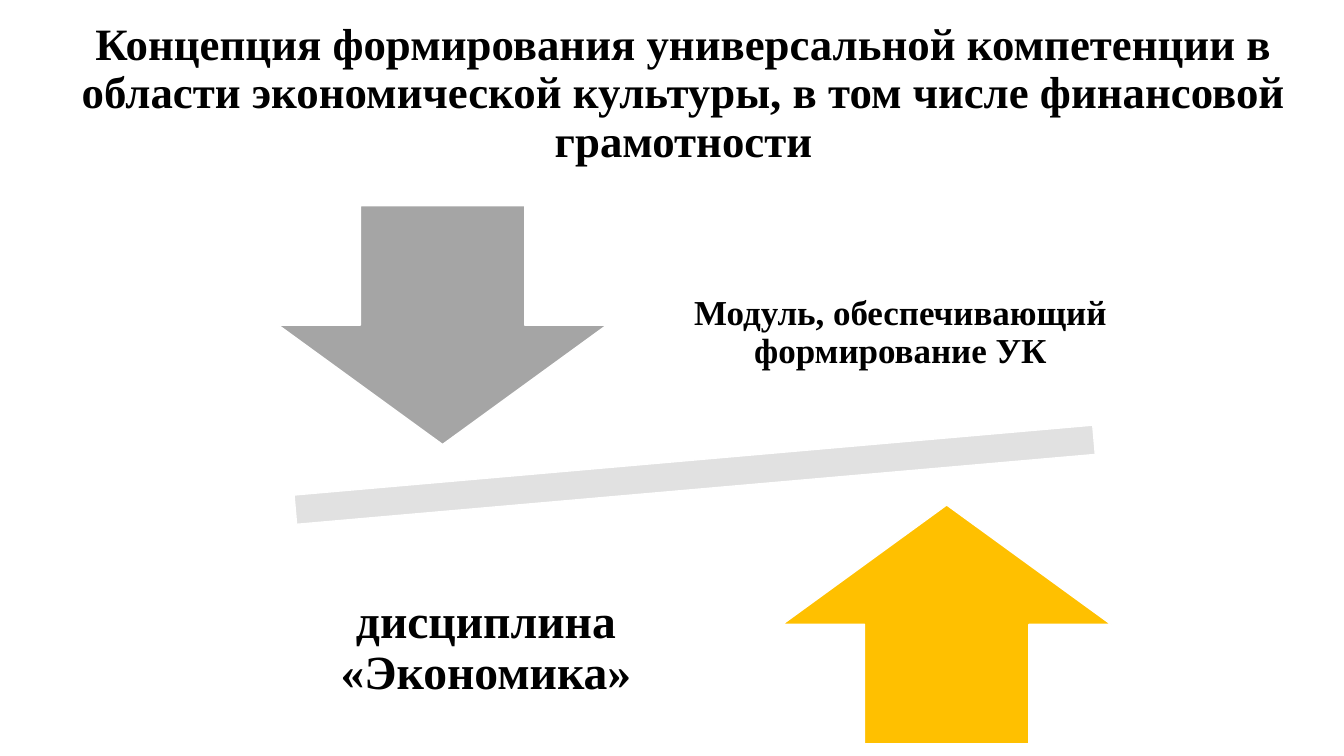
from pptx import Presentation
from pptx.dml.color import RGBColor
from pptx.enum.shapes import MSO_SHAPE
from pptx.enum.text import MSO_ANCHOR, MSO_AUTO_SIZE, PP_ALIGN
from pptx.util import Inches, Pt

MINUS, DOWN, UP = MSO_SHAPE.MATH_MINUS, MSO_SHAPE.DOWN_ARROW, MSO_SHAPE.UP_ARROW
MIDDLE, CENTER, NO_FIT = MSO_ANCHOR.MIDDLE, PP_ALIGN.CENTER, MSO_AUTO_SIZE.NONE

BLACK = RGBColor(0x00, 0x00, 0x00)
WHITE = RGBColor(0xFF, 0xFF, 0xFF)
GRAY = RGBColor(0xA5, 0xA5, 0xA5)
LIGHT_GRAY = RGBColor(0xE1, 0xE1, 0xE1)
AMBER = RGBColor(0xFF, 0xC0, 0x00)
FONT = "Times New Roman"

TITLE = ("Концепция формирования универсальной компетенции в области "
         "экономической культуры, в том числе финансовой грамотности")
TITLE_BOX = (0.65, 0.34, 12.26, 1.19)

BALANCE = [
    (MINUS, (1.48, 4.09, 10.82, 1.24), 355, LIGHT_GRAY),
    (DOWN, (2.76, 2.04, 3.26, 2.37), 0, GRAY),
    (UP, (7.76, 5.01, 3.26, 2.37), 0, AMBER),
]
LABELS = [
    ("Модуль, обеспечивающий формирование УК", (6.1, 2.06, 5.66, 2.49), 25, 0.19),
    ("дисциплина «Экономика»", (3.08, 5.19, 3.48, 2.49), 34, 0.26),
]


def inches(box):
    """Convert a box in inches to lengths."""
    return [Inches(value) for value in box]


def write(frame, text, size):
    """Fill a text frame with one centred bold paragraph."""
    frame.text = text
    frame.word_wrap = True
    frame.auto_size = NO_FIT
    frame.vertical_anchor = MIDDLE
    paragraph = frame.paragraphs[0]
    paragraph.alignment = CENTER
    paragraph.line_spacing = 0.9
    font = paragraph.runs[0].font
    font.name, font.size, font.bold = FONT, Pt(size), True
    font.color.rgb = BLACK


def add_balance_part(slide, kind, box, rotation, color):
    """Draw the beam or one of the arrows."""
    part = slide.shapes.add_shape(kind, *inches(box))
    part.rotation = rotation
    part.shadow.inherit = False
    part.fill.solid()
    part.fill.fore_color.rgb = color
    part.line.color.rgb = WHITE
    part.line.width = Pt(1)


def add_label(slide, text, box, size, inset):
    """Place the label opposite an arrow."""
    frame = slide.shapes.add_textbox(*inches(box)).text_frame
    write(frame, text, size)
    frame.margin_left = frame.margin_right = Inches(inset)
    frame.margin_top = frame.margin_bottom = Inches(inset)


def main():
    """Build and save the slide."""
    deck = Presentation()
    deck.slide_width, deck.slide_height = Inches(13.33), Inches(7.5)
    slide = deck.slides.add_slide(deck.slide_layouts[5])
    title = slide.shapes.title
    title.left, title.top, title.width, title.height = inches(TITLE_BOX)
    write(title.text_frame, TITLE, 32)
    for part in BALANCE:
        add_balance_part(slide, *part)
    for label in LABELS:
        add_label(slide, *label)
    deck.save("out.pptx")


if __name__ == "__main__":
    main()
